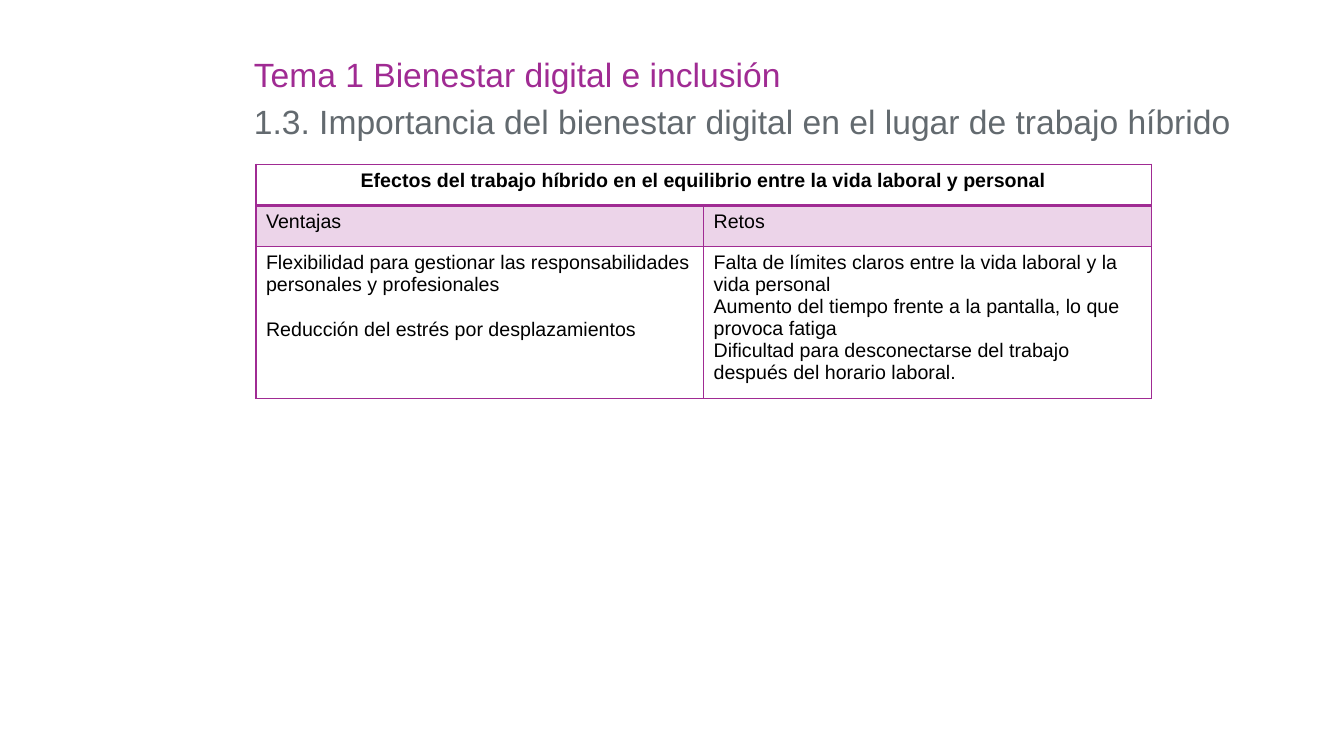
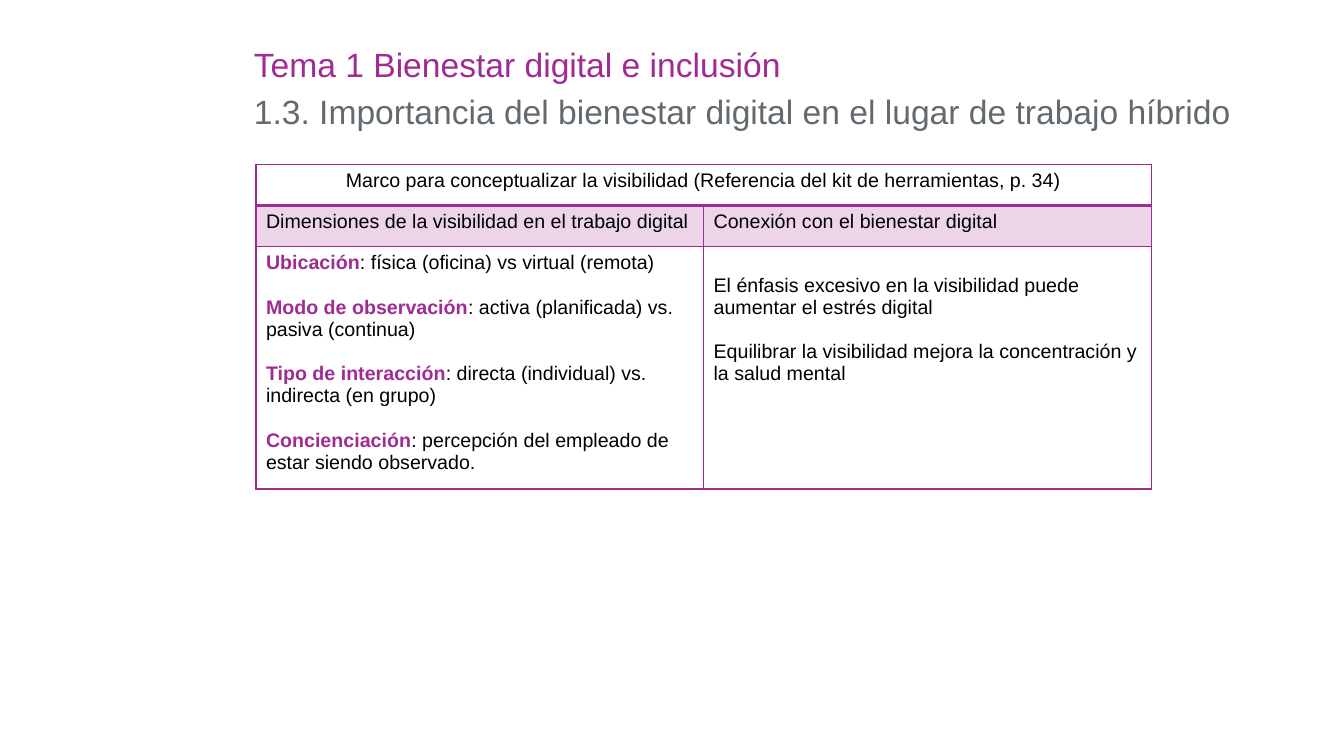
from dataclasses import dataclass

from lxml.etree import SubElement
from pptx import Presentation
from pptx.dml.color import RGBColor
from pptx.enum.text import MSO_ANCHOR as Anchor, PP_ALIGN as Align
from pptx.oxml.ns import qn
from pptx.util import Cm, Pt

COLOURS = {"accent": "A02B93", "subtitle": "636A6F", "text": "000000"}
FONT = "Arial"
TOPIC = "Tema 1 Bienestar digital e inclusión"
SECTION = "1.3. Importancia del bienestar digital en el lugar de trabajo híbrido"
COLUMN_WIDTH = Cm(11.28)
HEADER_HEIGHT = Cm(1.04)
TOP_INSET = 0.13  # cm
LINE_GAP = 16  # points, one empty line of table text


@dataclass(frozen=True)
class Entry:
    text: str
    term: str = ""


@dataclass(frozen=True)
class Column:
    heading: str
    entries: tuple[Entry, ...]
    gap: float = LINE_GAP
    top_inset: float = TOP_INSET


@dataclass(frozen=True)
class Topic:
    caption: str
    caption_bold: bool
    topic_spacing: float
    body_height: float
    columns: tuple[Column, Column]


TOPICS = (
    Topic(
        "Efectos del trabajo híbrido en el equilibrio entre la vida laboral y personal",
        True, 1.15, 3.58,
        (
            Column("Ventajas", (
                Entry("Flexibilidad para gestionar las responsabilidades personales y profesionales"),
                Entry("Reducción del estrés por desplazamientos"),
            )),
            Column("Retos", (
                Entry("Falta de límites claros entre la vida laboral y la vida personal"),
                Entry("Aumento del tiempo frente a la pantalla, lo que provoca fatiga"),
                Entry("Dificultad para desconectarse del trabajo después del horario laboral."),
            ), gap=0),
        ),
    ),
    Topic(
        "Marco para conceptualizar la visibilidad (Referencia del kit de herramientas, p. 34)",
        False, 0.9, 5.8,
        (
            Column("Dimensiones de la visibilidad en el trabajo digital", (
                Entry(": física (oficina) vs virtual (remota)", "Ubicación"),
                Entry(": activa (planificada) vs. pasiva (continua)", "Modo de observación"),
                Entry(": directa (individual) vs. indirecta (en grupo)", "Tipo de interacción"),
                Entry(": percepción del empleado de estar siendo observado.", "Concienciación"),
            )),
            Column("Conexión con el bienestar digital", (
                Entry("El énfasis excesivo en la visibilidad puede aumentar el estrés digital"),
                Entry("Equilibrar la visibilidad mejora la concentración y la salud mental"),
            ), top_inset=0.7),
        ),
    ),
)


def write(paragraph, text: str, *, size: float = 14, colour: str = "text",
          bold: bool = False, align=Align.LEFT, spacing: float = 1.0) -> None:
    """Append formatted text to a paragraph."""
    paragraph.alignment = align
    paragraph.line_spacing = spacing
    run = paragraph.add_run()
    run.text = text
    run.font.name = FONT
    run.font.size = Pt(size)
    run.font.bold = bold
    run.font.color.rgb = RGBColor.from_string(COLOURS[colour])


def set_borders(cell, top: float = 1, bottom: float = 1) -> None:
    """Outline a cell; call before filling it, as borders come first."""
    properties = cell._tc.get_or_add_tcPr()
    for side, width in (("L", 1), ("R", 1), ("T", top), ("B", bottom)):
        line = SubElement(properties, qn(f"a:ln{side}"), w=str(Pt(width)))
        fill = SubElement(line, qn("a:solidFill"))
        SubElement(fill, qn("a:srgbClr"), val=COLOURS["accent"])


def tint(cell) -> None:
    """Fill a cell with the accent colour at 20 % opacity."""
    cell.fill.solid()
    cell.fill.fore_color.rgb = RGBColor.from_string(COLOURS["accent"])
    colour = cell._tc.tcPr.find(f".//{qn('a:solidFill')}[last()]")
    colour = cell._tc.tcPr.find(f"{qn('a:solidFill')}/{qn('a:srgbClr')}")
    SubElement(colour, qn("a:alpha"), val="20000")


def add_title(slide, topic_spacing: float) -> None:
    frame = slide.shapes.add_textbox(Cm(6.15), Cm(1.09), Cm(27.38), Cm(2.59)).text_frame
    frame.word_wrap = True
    write(frame.paragraphs[0], TOPIC, size=24, colour="accent", spacing=topic_spacing)
    write(frame.add_paragraph(), SECTION, size=24, colour="subtitle", spacing=1.15)


def fill_body(cell, column: Column) -> None:
    cell.margin_top = Cm(column.top_inset)
    for index, entry in enumerate(column.entries):
        paragraph = cell.text_frame.add_paragraph() if index else cell.text_frame.paragraphs[0]
        if index:
            paragraph.space_before = Pt(column.gap)
        if entry.term:
            write(paragraph, entry.term, colour="accent", bold=True)
        write(paragraph, entry.text)


def add_topic_table(slide, topic: Topic) -> None:
    body_height = Cm(topic.body_height)
    table = slide.shapes.add_table(
        3, 2, Cm(6.45), Cm(4.14), 2 * COLUMN_WIDTH, 2 * HEADER_HEIGHT + body_height).table
    table.first_row = table.horz_banding = False
    for row, height in zip(table.rows, (HEADER_HEIGHT, HEADER_HEIGHT, body_height)):
        row.height = height

    # Caption across both columns
    caption = table.cell(0, 0)
    caption.merge(table.cell(0, 1))
    write(caption.text_frame.paragraphs[0], topic.caption,
          bold=topic.caption_bold, align=Align.CENTER)

    # Headings and body
    for index, column in enumerate(topic.columns):
        table.columns[index].width = COLUMN_WIDTH
        top, heading, body = (table.cell(row, index) for row in range(3))
        set_borders(top, bottom=2)
        set_borders(heading, top=2)
        set_borders(body)
        top.fill.background()
        tint(heading)
        body.fill.background()
        for cell in (top, heading, body):
            cell.vertical_anchor = Anchor.TOP
        write(heading.text_frame.paragraphs[0], column.heading)
        fill_body(body, column)


def main() -> None:
    deck = Presentation()
    deck.slide_width, deck.slide_height = Cm(33.87), Cm(19.05)
    for topic in TOPICS:
        slide = deck.slides.add_slide(deck.slide_layouts[6])
        add_title(slide, topic.topic_spacing)
        add_topic_table(slide, topic)
    deck.save("out.pptx")


if __name__ == "__main__":
    main()
